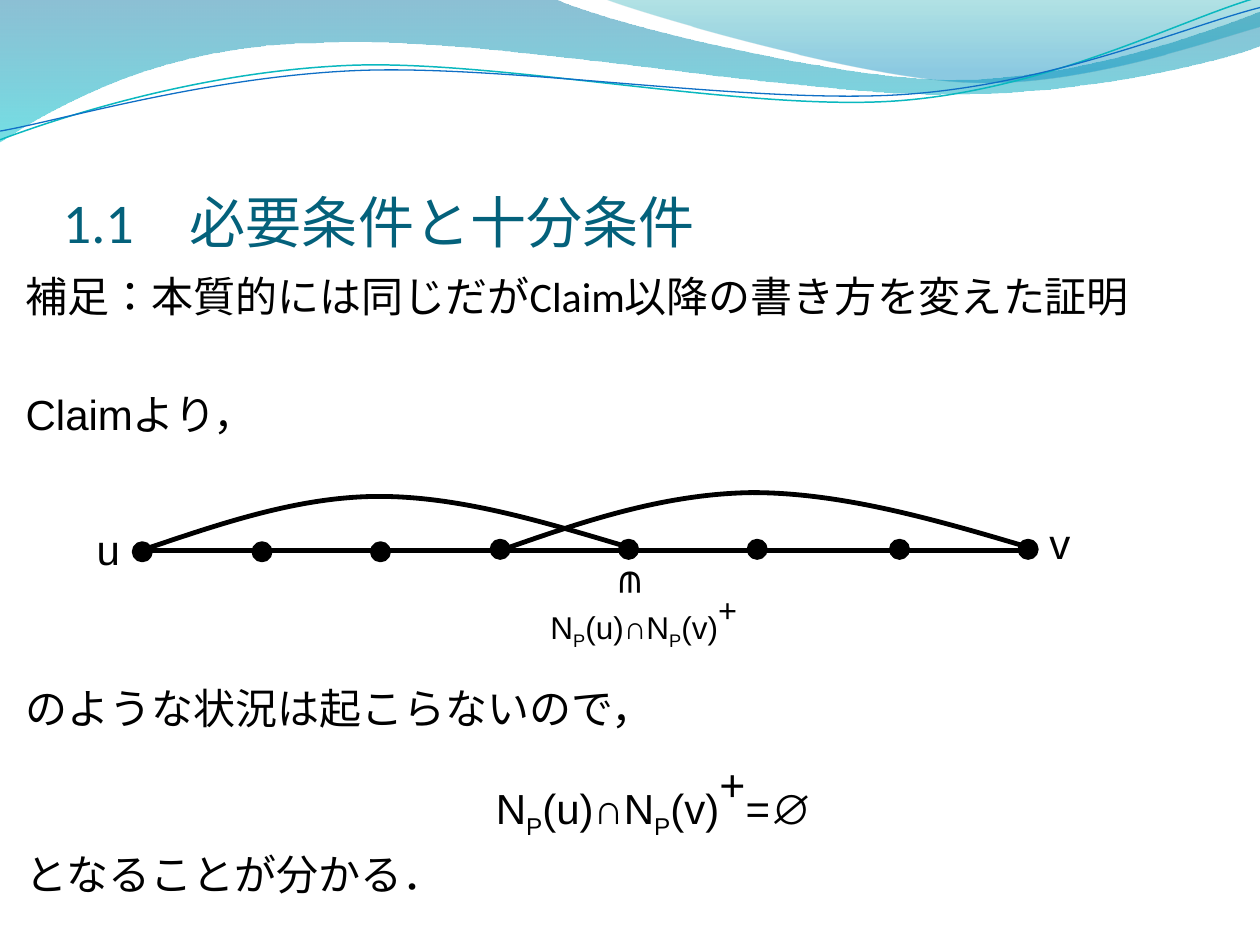
from pptx import Presentation
from pptx.dml.color import RGBColor
from pptx.enum.shapes import MSO_CONNECTOR, MSO_SHAPE
from pptx.enum.text import MSO_ANCHOR, PP_ALIGN
from pptx.oxml.ns import qn
from pptx.util import Pt

BLACK = RGBColor(0x00, 0x00, 0x00)
TITLE = RGBColor(0x04, 0x61, 0x7B)
DEEP_BLUE = RGBColor(0x00, 0x74, 0xA1)
CYAN = RGBColor(0x00, 0xC6, 0xCF)
TEAL = RGBColor(0x00, 0xA1, 0xA9)
BLUE = RGBColor(0x00, 0x8B, 0xBF)
TEAL_LINE = RGBColor(0x0A, 0xB8, 0xBF)
BLUE_LINE = RGBColor(0x0F, 0x6F, 0xC6)

prs = Presentation()
prs.slide_width, prs.slide_height = Pt(720), Pt(540)
s = prs.slides.add_slide(prs.slide_layouts[6])


def add_curve(start, segments, close=False):
    """Segments hold one point for a straight side, three for a cubic Bézier."""
    fb = s.shapes.build_freeform(Pt(start[0]), Pt(start[1]))
    fb.add_line_segments([(Pt(x), Pt(y)) for seg in segments for x, y in seg], close=close)
    sp = fb.convert_to_shape()
    sp.shadow.inherit = False
    sides = iter(list(sp._element.iter(qn("a:lnTo"))))
    for seg in segments:
        group = [next(sides) for _ in seg]
        if len(group) == 3:
            bezier = group[0].makeelement(qn("a:cubicBezTo"))
            group[0].addprevious(bezier)
            for side in group:
                bezier.append(side[0])
                side.getparent().remove(side)
    return sp


def add_text(x, y, w, h, paragraphs, wrap=False):
    """Each paragraph is (font, size, runs); a run is (text, size or None, baseline %)."""
    sp = s.shapes.add_textbox(Pt(x), Pt(y), Pt(w), Pt(h))
    tf = sp.text_frame
    tf.word_wrap = wrap
    for i, (font, size, runs) in enumerate(paragraphs):
        p = tf.paragraphs[0] if i == 0 else tf.add_paragraph()
        p.font.name, p.font.size, p.font.color.rgb = font, Pt(size), BLACK
        for text, run_size, baseline in runs:
            r = p.add_run()
            r.text = text
            r.font._element.set("lang", "ja-JP")
            if run_size:
                r.font.size = Pt(run_size)
            if baseline:
                r.font._element.set("baseline", str(baseline * 1000))
    return sp


# Waves across the top
wide_wave = [
    [(316.8, -0.7)],
    [(342.7, 12.2), (478, 45.4), (545.8, 45.4)],
    [(614, 45.4), (689.8, 18.7), (720, 6.5)],
    [(720.7, 25.9)],
    [(707.8, 31.7), (626.4, 54.7), (537.1, 54)],
    [(447.8, 54), (275, 20.2), (185, 24.5)],
    [(92.9, 25.2), (33.1, 59.8), (-0.7, 81.4)],
]
right_wave = [
    [(366.5, 7.9), (491, 44.6), (553.7, 46.8)],
    [(616.3, 49.7), (691.9, 23), (720, 15.1)],
    [(720, 0)],
]
for start, segments, stops in (
    ((0, -0.7), wide_wave, ((0, DEEP_BLUE, 45), (1, CYAN, 55))),
    ((344.9, -0.7), right_wave, ((0, TEAL, 30), (0.8, BLUE, 45))),
):
    sp = add_curve(start, segments, close=True)
    sp.line.fill.background()
    sp.fill.gradient()
    sp.fill.gradient_angle = 270
    for stop, (position, color, _) in zip(sp.fill.gradient_stops, stops):
        stop.position = position
        stop.color.rgb = color
    for clr, (_, _, opacity) in zip(sp._element.spPr.iter(qn("a:srgbClr")), stops):
        clr.append(clr.makeelement(qn("a:alpha"), {"val": str(opacity * 1000)}))

# Title
sp = add_text(36, 55.4, 648, 90, [("Calibri", 32, [("1.1　必要条件と十分条件", None, 0)])], wrap=True)
tf = sp.text_frame
tf.vertical_anchor = MSO_ANCHOR.BOTTOM
tf.margin_left = tf.margin_right = tf.margin_bottom = 0
tf.paragraphs[0].font.color.rgb = TITLE

# Body text, with room left for the diagram
intersection = [("N", None, 0), ("P", None, -25), ("(u)∩N", None, 0), ("P", None, -25), ("(v)", None, 0)]
body = [
    ("Calibri", 24, [("補足：本質的には同じだがClaim以降の書き方を変えた証明", None, 0)]),
    ("Arial", 24, [("Claimより，", None, 0)]),
    ("Arial", 24, [("のような状況は起こらないので，", None, 0)]),
    ("Arial", 24, intersection + [("+", 44, 30), ("=∅", None, 0)]),
    ("Arial", 24, [("となることが分かる．", None, 0)]),
]
sp = add_text(7.6, 151.2, 732.2, 345.6, body, wrap=True)
for p, gap in zip(sp.text_frame.paragraphs, (4.8, 38.4, 139, 8.8, 4.8)):
    p.space_before = Pt(gap)
sp.text_frame.paragraphs[3].alignment = PP_ALIGN.CENTER

# Path from u to v
line = s.shapes.add_connector(MSO_CONNECTOR.STRAIGHT, Pt(82), Pt(314.6), Pt(592.6), Pt(314.6))
line.line.color.rgb, line.line.width = BLACK, Pt(2.75)
sp_pr = line._element.spPr
sp_pr.append(sp_pr.makeelement(qn("a:effectLst")))

DOT = 10
for x, y in ((76.3, 310.3), (144.7, 310.3), (212.4, 310.3), (280.8, 308.9),
             (354.2, 308.9), (427.7, 308.9), (509, 308.9), (582.5, 308.9)):
    sp = s.shapes.add_shape(MSO_SHAPE.OVAL, Pt(x), Pt(y), Pt(DOT), Pt(DOT))
    sp.shadow.inherit = False
    sp.fill.solid()
    sp.fill.fore_color.rgb = sp.line.color.rgb = BLACK
    sp.line.width = Pt(2)

# Thin lines over the waves, then the two arcs of the path
teal_line = [
    [(34.6, 67), (113.8, 41), (199.4, 37.4)],
    [(284.4, 33.8), (427, 64.1), (513.4, 57.6)],
    [(599.8, 51.1), (675.4, 10.8), (718.6, -1.4)],
]
blue_line = [
    [(33.8, 69.1), (118.1, 43.9), (203.8, 40.3)],
    [(290.2, 36.7), (429.8, 59.8), (516.2, 54)],
    [(601.9, 48.2), (677.5, 15.1), (720, 4.3)],
]
u_arc = [
    [(125.3, 299.5), (170.6, 283.7), (216.7, 283.7)],
    [(263.5, 283.7), (312.5, 298.8), (360.7, 313.2)],
]
v_arc = [
    [(533.5, 296.6), (480.2, 281.5), (429.8, 281.5)],
    [(379.4, 282.2), (332.6, 298.1), (285.8, 314.6)],
]
for start, segments, color, width in (
    ((0, 79.9), teal_line, TEAL_LINE, 0.85),
    ((0, 74.9), blue_line, BLUE_LINE, 0.75),
    ((80.6, 314.6), u_arc, BLACK, 2.75),
    ((586.8, 312.5), v_arc, BLACK, 2.75),
):
    sp = add_curve(start, segments)
    sp.fill.background()
    sp.line.color.rgb, sp.line.width = color, Pt(width)

# Labels of the diagram
for text, x, y, w, angle in (("u", 48.2, 295.5, 28, 0), ("v", 592.6, 292.3, 26.6, 0),
                             ("∊", 347.8, 313.2, 28, 90)):
    sp = add_text(x, y, w, 36.4, [("Arial", 24, [(text, None, 0)])])
    sp.rotation = angle
add_text(307.4, 329.8, 126, 33.1, [("Arial", 18, intersection + [("+", 32, 30)])])

prs.save("out.pptx")
